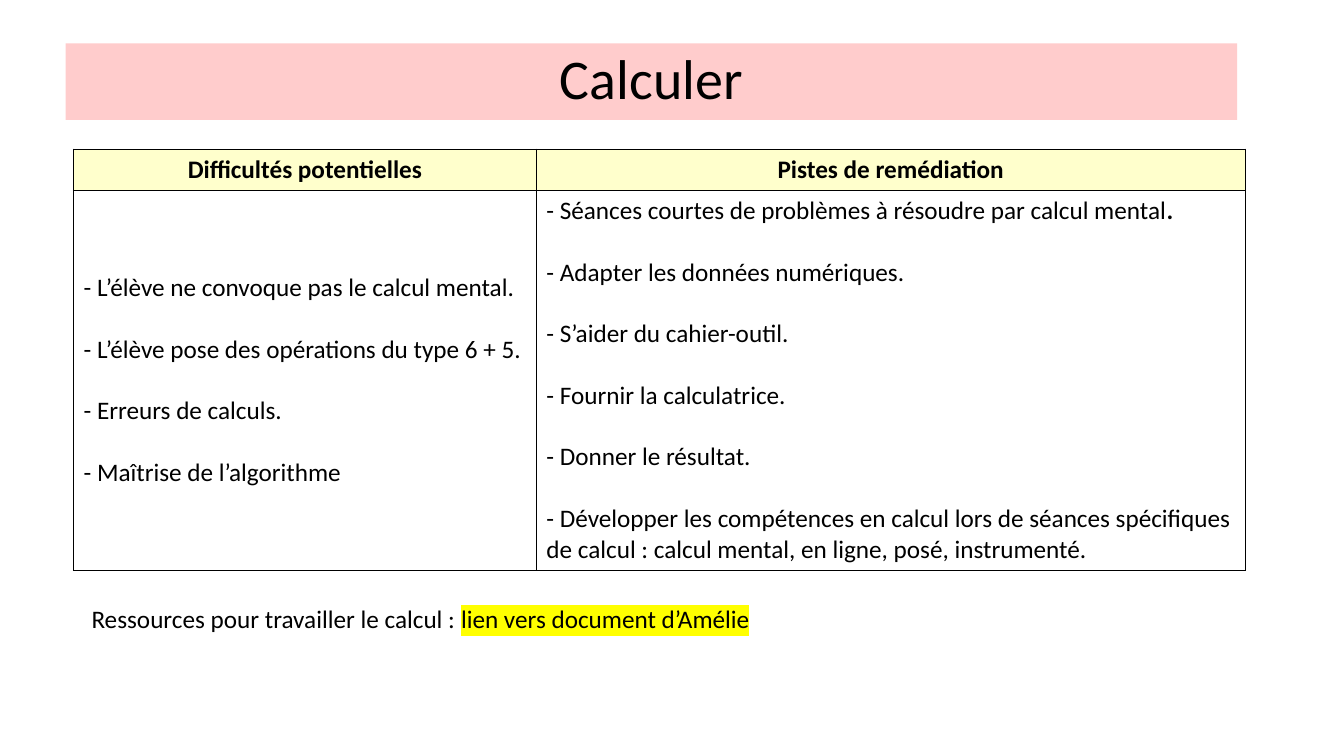
from lxml import etree
from pptx import Presentation, util as u
from pptx.dml.color import RGBColor
from pptx.enum import shapes, text
from pptx.oxml import ns

BLACK = RGBColor(0x00, 0x00, 0x00)
WHITE = RGBColor(0xFF, 0xFF, 0xFF)
PINK = RGBColor(0xFF, 0xCC, 0xCC)
CREAM = RGBColor(0xFF, 0xFF, 0xCC)
YELLOW = RGBColor(0xFF, 0xFF, 0x00)
PX = 9144  # 100 px to the inch
GAP = u.Pt(22)  # one line of 18 pt text

HEADS = ["Difficultés potentielles", "Pistes de remédiation"]
ISSUES = [
    "- L’élève ne convoque pas le calcul mental.",
    "- L’élève pose des opérations du type 6 + 5.",
    "- Erreurs de calculs.",
    "- Maîtrise de l’algorithme",
]
HINTS = [
    "- Séances courtes de problèmes à résoudre par calcul mental",
    "- Adapter les données numériques.",
    "- S’aider du cahier-outil.",
    "- Fournir la calculatrice.",
    "- Donner le résultat.",
    "- Développer les compétences en calcul lors de séances spécifiques "
    "de calcul : calcul mental, en ligne, posé, instrumenté.",
]


def style(run, size=18, bold=False):
    run.font.name = "Calibri"
    run.font.size = u.Pt(size)
    run.font.bold = bold
    run.font.color.rgb = BLACK


def border(cell):
    """Draw a thin black line on all four sides of a cell."""
    props = cell._tc.get_or_add_tcPr()
    for spot, side in enumerate(("lnL", "lnR", "lnT", "lnB")):
        line = etree.Element(ns.qn(f"a:{side}"), w=str(u.Pt(1)))
        fill = etree.SubElement(line, ns.qn("a:solidFill"))
        etree.SubElement(fill, ns.qn("a:srgbClr"), val=str(BLACK))
        props.insert(spot, line)


prs = Presentation()
prs.slide_width, prs.slide_height = 1333 * PX, 750 * PX
slide = prs.slides.add_slide(prs.slide_layouts[6])

# Table
table = slide.shapes.add_table(2, 2, 73 * PX, 148 * PX, 1162 * PX, 418 * PX).table
table.first_row = table.horz_banding = False
for col, width in zip(table.columns, (459, 703)):
    col.width = width * PX
for row, height in zip(table.rows, (41, 377)):
    row.height = height * PX

for c, (head, items) in enumerate(zip(HEADS, (ISSUES, HINTS))):
    for r, lines in enumerate(([head], items)):
        cell = table.cell(r, c)
        cell.fill.solid()
        cell.fill.fore_color.rgb = WHITE if r else CREAM
        cell.vertical_anchor = text.MSO_ANCHOR.MIDDLE
        cell.text_frame.text = "\n".join(lines)
        for n, para in enumerate(cell.text_frame.paragraphs):
            para.alignment = text.PP_ALIGN.LEFT if r else text.PP_ALIGN.CENTER
            para.space_before = GAP if n else 0
            style(para.runs[0], bold=r == 0)
        border(cell)

hints = table.cell(1, 1)
hints.vertical_anchor = text.MSO_ANCHOR.TOP
stop = hints.text_frame.paragraphs[0].add_run()
stop.text = "."
style(stop, bold=True)

# Resources
note = slide.shapes.add_textbox(81 * PX, 594 * PX, 1133 * PX, 40 * PX)
note.text_frame.word_wrap = True
para = note.text_frame.paragraphs[0]
para.text = "Ressources pour travailler le calcul : "
link = para.add_run()
link.text = "lien vers document d’Amélie"
for run in para.runs:
    style(run)
mark = etree.Element(ns.qn("a:highlight"))
etree.SubElement(mark, ns.qn("a:srgbClr"), val=str(YELLOW))
link._r.rPr.find(ns.qn("a:solidFill")).addnext(mark)

# Title
title = slide.shapes.add_shape(
    shapes.MSO_SHAPE.RECTANGLE, 65 * PX, 43 * PX, 1162 * PX, 76 * PX)
title.shadow.inherit = False
title.fill.solid()
title.fill.fore_color.rgb = PINK
title.line.fill.background()
title.text_frame.vertical_anchor = text.MSO_ANCHOR.MIDDLE
title.text_frame.text = "Calculer"
para = title.text_frame.paragraphs[0]
para.alignment = text.PP_ALIGN.CENTER
para.line_spacing = 0.9
style(para.runs[0], 40)

prs.save("out.pptx")
